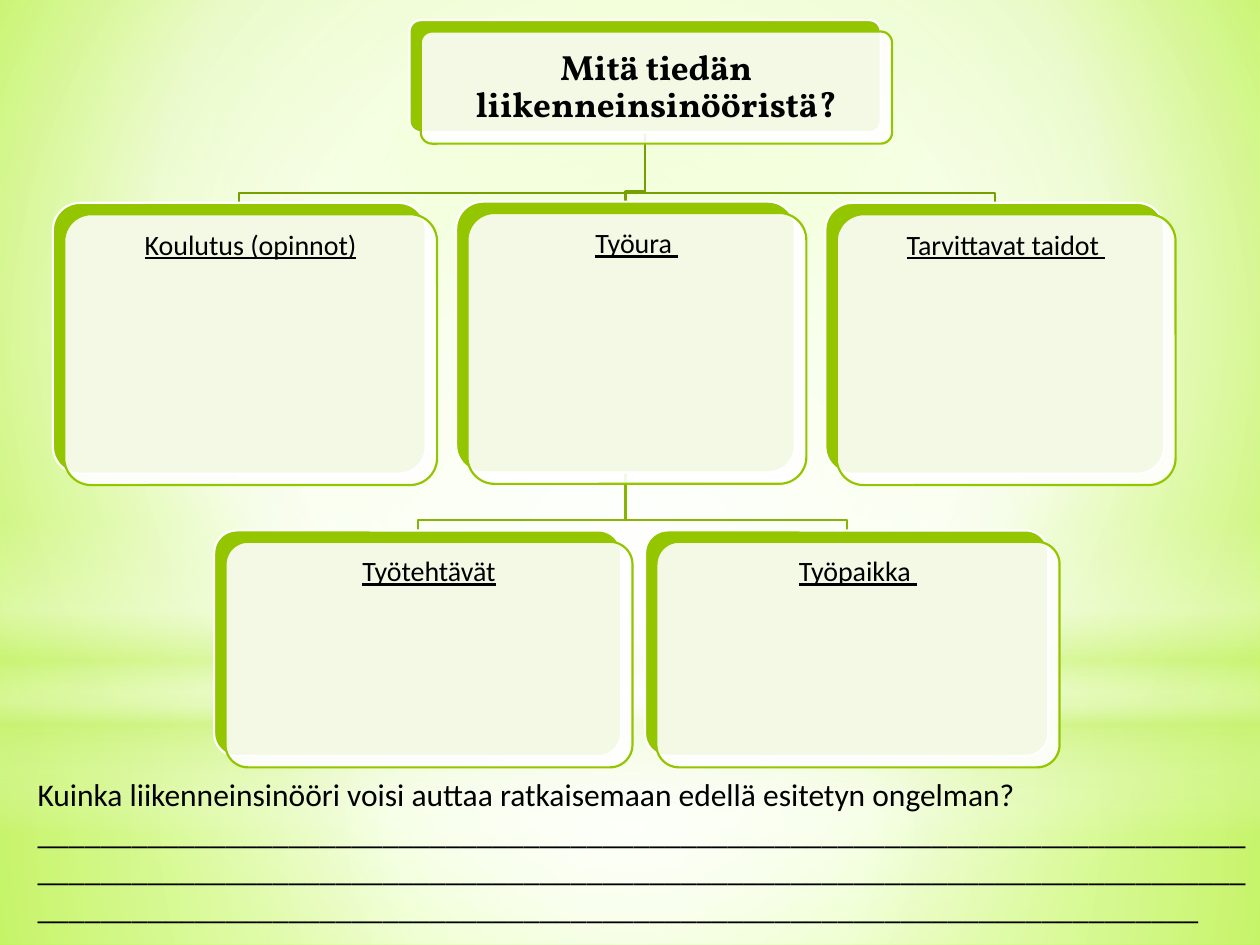
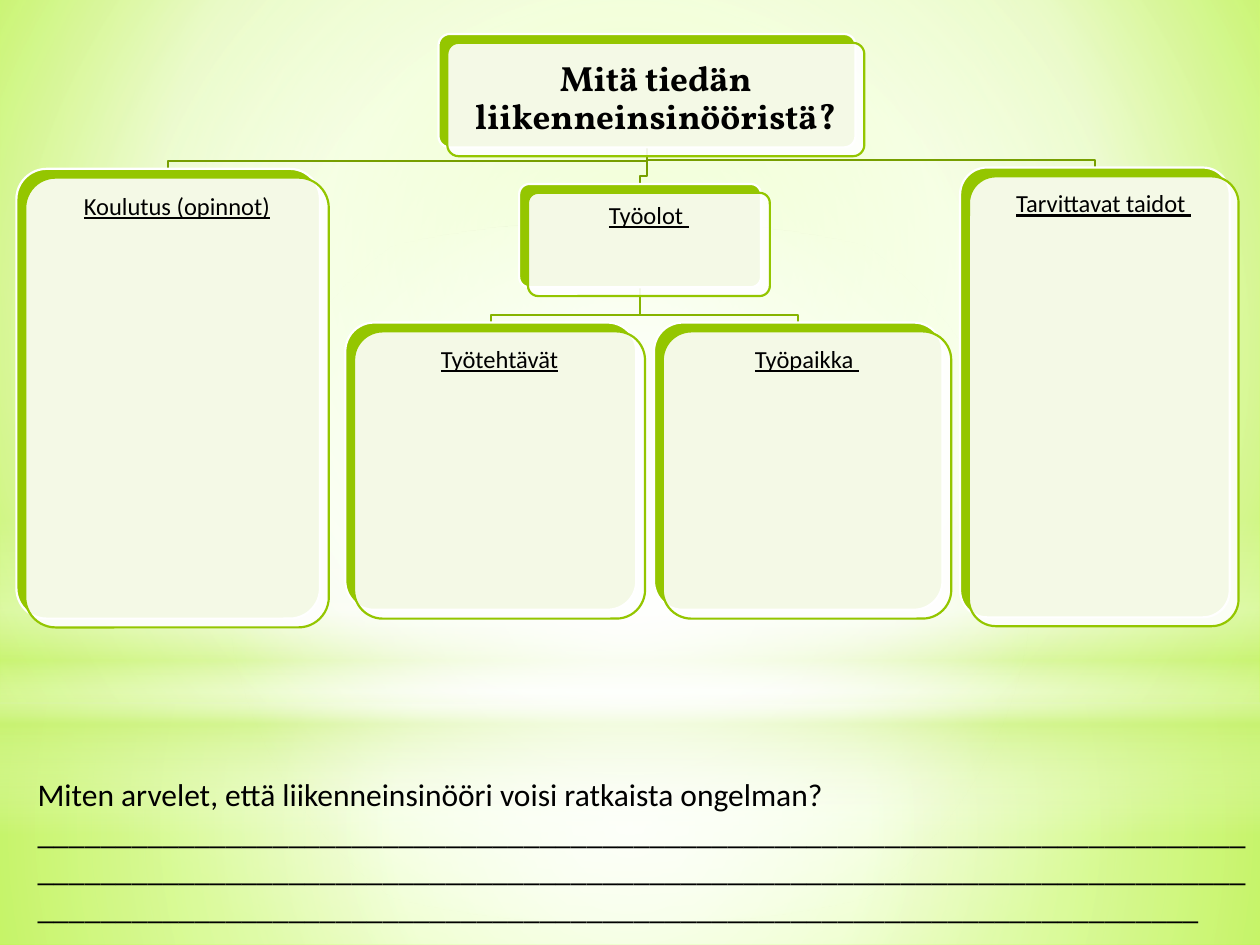
from pptx import Presentation
from pptx.dml.color import RGBColor
from pptx.enum import shapes as kinds, text as txt
from pptx.oxml import parse_xml
from pptx.oxml.ns import nsdecls, qn
from pptx.util import Inches, Pt

HUES = {
    "green": "94C600", "white": "FFFFFF", "ink": "000000",
    "upper": "779F00", "lower": "86B400", "pale": "CAF278",
    "lime": "CAFF60", "mist": "F7FFE7", "edge": "B7FF29",
}
ROUND = kinds.MSO_SHAPE.ROUNDED_RECTANGLE


def hue(name):
    return RGBColor.from_string(HUES[name])


def blend(root, stops, focus=None):
    """Replace the first gradient under root; without a focus it runs downwards."""
    marks = "".join(
        f'<a:gs pos="{pos * 1000}"><a:srgbClr val="{HUES[name]}">'
        f'<a:alpha val="{alpha * 1000}"/></a:srgbClr></a:gs>'
        for pos, name, alpha in stops)
    if focus:
        left, top, right, low = (n * 1000 for n in focus)
        course = (f'<a:path path="circle"><a:fillToRect l="{left}" t="{top}" '
                  f'r="{right}" b="{low}"/></a:path>')
    else:
        course = '<a:lin ang="5400000" scaled="0"/>'
    old = root.find(".//" + qn("a:gradFill"))
    old.getparent().replace(old, parse_xml(
        f'<a:gradFill {nsdecls("a")} rotWithShape="1">'
        f'<a:gsLst>{marks}</a:gsLst>{course}</a:gradFill>'))


deck = Presentation()
deck.slide_width, deck.slide_height = Inches(10), Inches(7.5)
blank = deck.slide_layouts[6]

# Shared background on the master
base = deck.slide_master
base.background.fill.gradient()
blend(base.element, [(0, "lime", 100), (60, "mist", 100), (100, "edge", 100)],
      (20, 10, 20, 60))

# Shared glows: kind, top, height, stops, focus
mid = (50, 50, 50, 50)
RECT, OVAL = kinds.MSO_SHAPE.RECTANGLE, kinds.MSO_SHAPE.OVAL
glows = [
    (RECT, 5.58, 1.92, [(0, "white", 91), (37, "white", 76), (100, "pale", 79)], mid),
    (RECT, 0, 5.58, [(0, "white", 89), (48, "white", 62), (100, "pale", 79)], mid),
    (RECT, 4.12, 2.5, [(0, "white", 0), (29, "white", 30), (45, "pale", 40),
                       (55, "white", 26), (65, "pale", 60), (100, "white", 0)], None),
    (OVAL, 1.75, 5.58, [(0, "white", 100), (56, "white", 0)], mid),
]
first = deck.slides.add_slide(blank)
for num, (kind, top, high, stops, focus) in enumerate(glows):
    glow = first.shapes.add_shape(kind, 0, Inches(top), Inches(10), Inches(high))
    glow.shadow.inherit = False
    glow.line.fill.background()
    glow.fill.gradient()
    blend(glow.element, stops, focus)
    glow.element.nvSpPr.cNvPr.set("id", str(20 + num))
    base.shapes.element.append(glow.element)

# Charts: boxes are title, three branches, then two leaves under the middle branch
TITLE = "Mitä tiedän liikenneinsinööristä?"
links = [(0, 3, "upper"), (2, 5, "lower"), (2, 4, "lower"),
         (0, 2, "upper"), (0, 1, "upper")]
pages = [
    {"shift": 0.09, "bend": 0.08, "size": 16, "inset": 0.07,
     "ask": "Kuinka liikenneinsinööri voisi auttaa ratkaisemaan edellä esitetyn ongelman?",
     "boxes": [
         (TITLE, 3.25, 0.16, 3.74, 0.89),
         ("Koulutus (opinnot)", 0.42, 1.61, 2.96, 2.15),
         ("Työura ", 3.62, 1.6, 2.69, 2.15),
         ("Tarvittavat taidot ", 6.55, 1.61, 2.69, 2.15),
         ("Työtehtävät", 1.7, 4.21, 3.23, 1.79),
         ("Työpaikka ", 5.12, 4.21, 3.2, 1.79)]},
    {"shift": 0.07, "bend": 0.06, "size": 14, "inset": 0.06,
     "ask": "Miten arvelet, että liikenneinsinööri voisi ratkaista ongelman?",
     "boxes": [
         (TITLE, 3.48, 0.27, 3.31, 0.9),
         ("Koulutus (opinnot)", 0.13, 1.34, 2.41, 3.57),
         ("Työolot ", 4.12, 1.46, 1.92, 0.82),
         ("Tarvittavat taidot ", 7.62, 1.33, 2.14, 3.57),
         ("Työtehtävät", 2.74, 2.56, 2.31, 2.28),
         ("Työpaikka ", 5.19, 2.56, 2.29, 2.28)]},
]

for page, slide in zip(pages, [first, deck.slides.add_slide(blank)]):
    boxes = page["boxes"]

    # Branch lines, from bottom centre to top centre
    for start, end, tone in links:
        _, left, top, wide, high = boxes[start]
        _, left2, top2, wide2, _ = boxes[end]
        x, y = left + wide / 2, top + high
        x2, turn = left2 + wide2 / 2, top2 - page["bend"]
        pen = slide.shapes.build_freeform(Inches(x), Inches(y), scale=1.0)
        pen.add_line_segments(
            [(Inches(a), Inches(b)) for a, b in [(x, turn), (x2, turn), (x2, top2)]],
            close=False)
        branch = pen.convert_to_shape()
        branch.shadow.inherit = False
        branch.fill.background()
        branch.line.color.rgb = hue(tone)
        branch.line.width = Pt(1.25)

    # Boxes: a green card behind a nearly opaque white one
    for label, left, top, wide, high in boxes:
        for shift, fill, rim in [(0, "green", "white"),
                                 (page["shift"], "white", "green")]:
            card = slide.shapes.add_shape(ROUND, Inches(left + shift),
                                          Inches(top + shift), Inches(wide), Inches(high))
            card.adjustments[0] = 0.1
            card.shadow.inherit = False
            card.fill.solid()
            card.fill.fore_color.rgb = hue(fill)
            card.line.color.rgb = hue(rim)
            card.line.width = Pt(1.25)
        paint = card.element.spPr.find(qn("a:solidFill"))[0]
        paint.append(parse_xml(f'<a:alpha {nsdecls("a")} val="90000"/>'))

        head = label == TITLE
        frame = card.text_frame
        frame.text = label
        frame.word_wrap = True
        frame.vertical_anchor = txt.MSO_ANCHOR.MIDDLE if head else txt.MSO_ANCHOR.TOP
        inset = Inches(0.08 if head else page["inset"])
        frame.margin_left = frame.margin_right = inset
        frame.margin_top = frame.margin_bottom = inset
        para = frame.paragraphs[0]
        para.alignment = txt.PP_ALIGN.CENTER
        para.line_spacing = 0.9
        font = para.runs[0].font
        font.name = "Vollkorn" if head else "Calibri"
        font.size = Pt(20 if head else page["size"])
        font.bold, font.underline = head, not head
        font.color.rgb = hue("ink")

    # Question with writing lines
    note = slide.shapes.add_textbox(Inches(0.2), Inches(6.1), Inches(9.8), Inches(1.31))
    frame = note.text_frame
    frame.word_wrap = True
    frame.auto_size = txt.MSO_AUTO_SIZE.SHAPE_TO_FIT_TEXT
    frame.text = page["ask"] + " " + "_" * 228
    font = frame.paragraphs[0].runs[0].font
    font.name, font.size = "Calibri", Pt(18)
    font.color.rgb = hue("ink")

deck.save("out.pptx")
